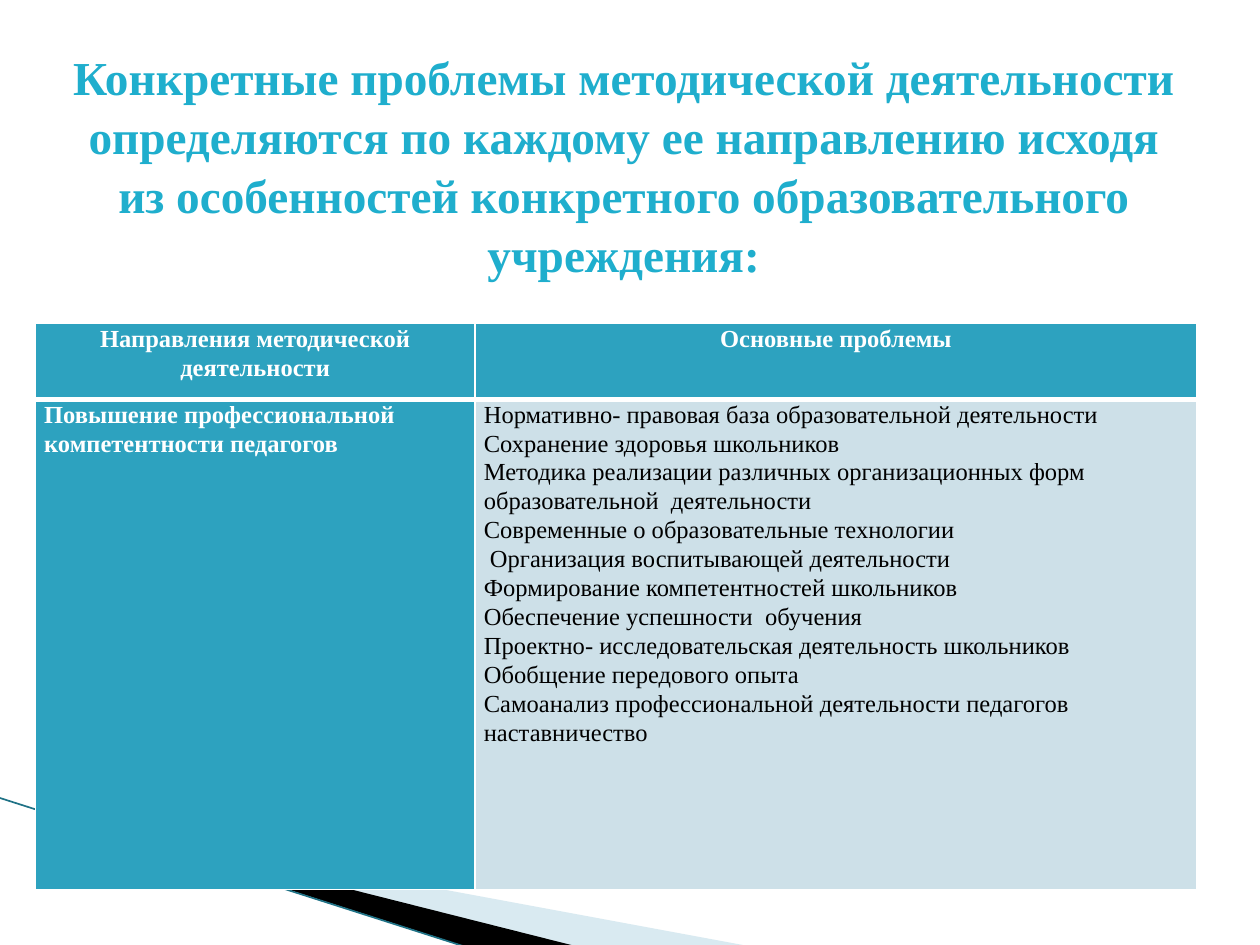
from lxml.etree import SubElement
from pptx import Presentation
from pptx.dml.color import RGBColor
from pptx.enum.shapes import MSO_CONNECTOR
from pptx.enum.text import MSO_ANCHOR, MSO_AUTO_SIZE, PP_ALIGN
from pptx.oxml.ns import qn
from pptx.util import Pt

WHITE = RGBColor(0xFF, 0xFF, 0xFF)
BLACK = RGBColor(0, 0, 0)
TITLE_BLUE = RGBColor(0x1F, 0xAE, 0xCD)
TEAL = RGBColor(0x2D, 0xA2, 0xBF)
DARK_TEAL = RGBColor(0x1F, 0x72, 0x86)
PALE_BLUE = RGBColor(0xCD, 0xE0, 0xE8)
WEDGE_BLUE = RGBColor(0xA0, 0xCB, 0xDC)
FONT = "Times New Roman"

TITLE = (
    "Конкретные проблемы методической деятельности определяются по каждому ее "
    "направлению исходя из особенностей конкретного образовательного учреждения:"
)
HEADERS = ["Направления методической деятельности", "Основные проблемы"]
DIRECTION = "Повышение профессиональной компетентности педагогов"
PROBLEMS = [
    "Нормативно- правовая база образовательной деятельности",
    "Сохранение здоровья школьников",
    "Методика реализации различных организационных форм образовательной  деятельности",
    "Современные о образовательные технологии",
    " Организация воспитывающей деятельности",
    "Формирование компетентностей школьников",
    "Обеспечение успешности  обучения",
    "Проектно- исследовательская деятельность школьников",
    "Обобщение передового опыта",
    "Самоанализ профессиональной деятельности педагогов",
    "наставничество",
]


def write_text(frame, lines, size=14, color=WHITE, bold=True,
               align=PP_ALIGN.LEFT, spacing=1.07):
    """Write one formatted paragraph for each line."""
    for index, line in enumerate(lines):
        para = frame.add_paragraph() if index else frame.paragraphs[0]
        para.alignment = align
        para.line_spacing = spacing
        span = para.add_run()
        span.text = line
        span.font.name = FONT
        span.font.size = Pt(size)
        span.font.bold = bold
        span.font.color.rgb = color


def add_wedge(page, left, top, points, color, alpha=100):
    """Draw a filled polygon from points relative to a corner."""
    start, *others = [(Pt(left + x), Pt(top + y)) for x, y in points]
    builder = page.shapes.build_freeform(*start, scale=1.0)
    builder.add_line_segments(others, close=True)
    wedge = builder.convert_to_shape()
    wedge.shadow.inherit = False
    wedge.line.fill.background()
    wedge.fill.solid()
    wedge.fill.fore_color.rgb = color
    if alpha < 100:
        tint = wedge.fill._xPr.find(qn("a:solidFill"))[0]
        SubElement(tint, qn("a:alpha"), val=str(alpha * 1000))


def add_corner_decoration(page, left, top):
    """Draw the two wedges and the thin line in the bottom corner."""
    pale = [(39.6, 12.7), (428.4, 84.7), (328.3, 84.7), (39.6, 12)]
    dark = [(38.2, 11.3), (329, 84.7), (267.8, 85.4), (38.9, 12)]
    add_wedge(page, left, top, pale, WEDGE_BLUE, alpha=40)
    add_wedge(page, left, top, dark, BLACK)
    edge = page.shapes.add_connector(
        MSO_CONNECTOR.STRAIGHT, Pt(left - 0.7), Pt(top - 0.2),
        Pt(left + 267.1), Pt(top + 85.4))
    edge.line.color.rgb = DARK_TEAL
    edge.line.width = Pt(0.95)
    SubElement(edge._element.spPr, qn("a:effectLst"))


def place_title(page, left, top, width, height):
    """Position and format the title placeholder."""
    box = page.shapes.title
    box.left, box.top, box.width, box.height = map(Pt, (left, top, width, height))
    frame = box.text_frame
    frame.word_wrap = True
    frame.auto_size = MSO_AUTO_SIZE.NONE
    frame.vertical_anchor = MSO_ANCHOR.TOP
    frame.margin_left = Pt(15.8)
    frame.margin_top = Pt(5.2)
    write_text(frame, [TITLE], size=27, color=TITLE_BLUE,
               align=PP_ALIGN.CENTER, spacing=1.04)


def format_cell(cell, fill, bottom=1):
    """Set the borders, fill and margins of a cell."""
    properties = cell._tc.get_or_add_tcPr()
    for side, width in (("L", 1), ("R", 1), ("T", 1), ("B", bottom)):
        border = SubElement(properties, qn(f"a:ln{side}"), w=str(Pt(width)))
        solid = SubElement(border, qn("a:solidFill"))
        SubElement(solid, qn("a:srgbClr"), val=str(WHITE))
    cell.fill.solid()
    cell.fill.fore_color.rgb = fill
    cell.margin_left = cell.margin_right = Pt(5)
    cell.margin_top = cell.margin_bottom = 0


def add_problem_table(page, left, top, width, height):
    """Build the table of directions and their main problems."""
    table = page.shapes.add_table(
        2, 2, Pt(left), Pt(top), Pt(width), Pt(height)).table
    first_width, header_height = 251.3, 43.2
    table.columns[0].width = Pt(first_width)
    table.columns[1].width = Pt(width - first_width)
    table.rows[0].height = Pt(header_height)
    table.rows[1].height = Pt(height - header_height)
    for column, header in enumerate(HEADERS):
        cell = table.cell(0, column)
        format_cell(cell, TEAL, bottom=3)
        write_text(cell.text_frame, [header], align=PP_ALIGN.CENTER)
    direction, problems = table.cell(1, 0), table.cell(1, 1)
    format_cell(direction, TEAL)
    write_text(direction.text_frame, [DIRECTION])
    format_cell(problems, PALE_BLUE)
    write_text(problems.text_frame, PROBLEMS, color=BLACK, bold=False)


def main():
    """Build the deck and save it."""
    deck = Presentation()
    deck.slide_width, deck.slide_height = Pt(720), Pt(540)
    page = deck.slides.add_slide(deck.slide_layouts[5])
    add_corner_decoration(page, 0, 456)
    place_title(page, 20.2, 20.9, 663.8, 499)
    add_problem_table(page, 20.2, 185, 663.8, 323.3)
    deck.save("out.pptx")


if __name__ == "__main__":
    main()
